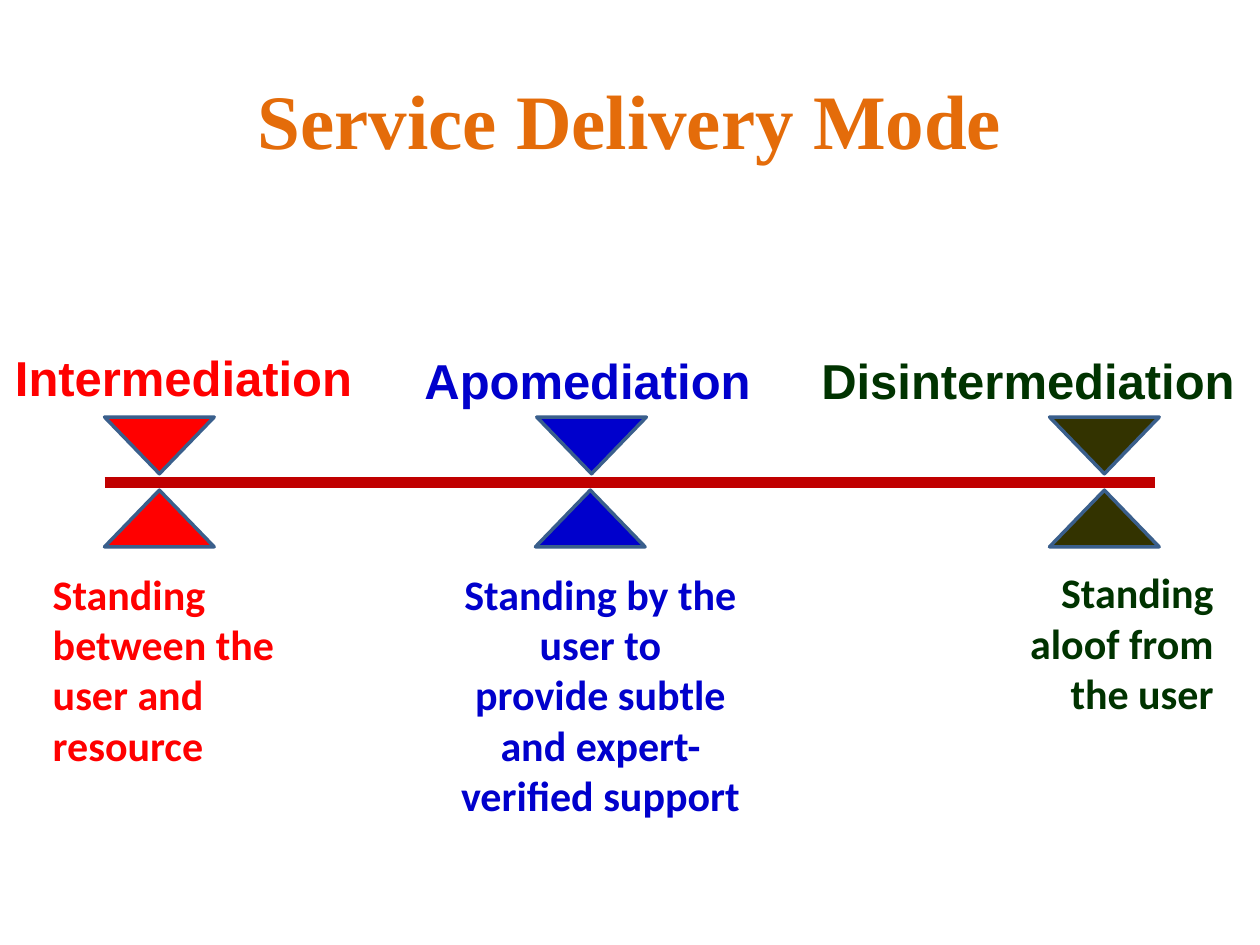
from dataclasses import dataclass

import pptx
import pptx.dml.color
import pptx.enum.shapes
import pptx.enum.text
import pptx.oxml
import pptx.presentation
import pptx.slide
import pptx.text.text
import pptx.util
from pptx.util import Inches

Align = pptx.enum.text.PP_ALIGN


@dataclass(frozen=True)
class Theme:
    title_color: str = "E46C0A"
    axis_color: str = "C00000"
    outline_color: str = "3A5F8C"
    red: str = "FF0000"
    blue: str = "0000CC"
    green: str = "003300"
    olive: str = "333300"
    title_font: str = "Times New Roman"
    label_font: str = "Arial"
    caption_font: str = "Calibri"
    title_size: int = 44
    label_size: int = 28
    caption_size: int = 24
    axis_width: int = 6
    outline_width: int = 2


@dataclass(frozen=True)
class Box:
    left: float
    top: float
    width: float
    height: float


@dataclass(frozen=True)
class Mode:
    name: str
    caption: tuple[str, ...]
    text_color: str
    marker_color: str
    label_box: Box
    caption_box: Box
    upper_left: float
    lower_left: float
    align: Align


THEME = Theme()
AXIS_LEFT, AXIS_RIGHT, AXIS_Y = 0.83, 9.17, 3.83
MARKER_WIDTH, MARKER_HEIGHT = 0.87, 0.45
UPPER_TOP, LOWER_TOP = 3.31, 3.89

MODES = (
    Mode("Intermediation", ("Standing between the", "user and resource"),
         THEME.red, THEME.red, Box(0.02, 2.71, 2.91, 0.57),
         Box(0.32, 4.46, 2.05, 1.72), 0.83, 0.83, Align.LEFT),
    Mode("Apomediation",
         ("Standing by the user to", "provide subtle", "and expert-verified support"),
         THEME.blue, THEME.blue, Box(3.27, 2.73, 2.82, 0.57),
         Box(3.47, 4.46, 2.59, 2.12), 4.26, 4.25, Align.CENTER),
    Mode("Disintermediation", ("Standing aloof from", "the user"),
         THEME.green, THEME.olive, Box(6.42, 2.73, 3.52, 0.57),
         Box(7.68, 4.45, 2.05, 1.31), 8.33, 8.33, Align.RIGHT),
)


def rgb(color: str) -> pptx.dml.color.RGBColor:
    return pptx.dml.color.RGBColor.from_string(color)


def write_lines(frame: pptx.text.text.TextFrame, lines: tuple[str, ...], font: str,
                size: int, color: str, align: Align, wrap: bool) -> None:
    frame.text = "\n".join(lines)
    frame.word_wrap = wrap
    for paragraph in frame.paragraphs:
        paragraph.alignment = align
        paragraph.font.name = font
        paragraph.font.size = pptx.util.Pt(size)
        paragraph.font.bold = True
        paragraph.font.color.rgb = rgb(color)


def add_title(slide: pptx.slide.Slide, text: str, box: Box) -> None:
    title = slide.shapes.title
    title.left, title.top = Inches(box.left), Inches(box.top)
    title.width, title.height = Inches(box.width), Inches(box.height)
    write_lines(title.text_frame, (text,), THEME.title_font, THEME.title_size,
                THEME.title_color, Align.CENTER, False)
    title.text_frame.auto_size = pptx.enum.text.MSO_AUTO_SIZE.NONE


def add_text(slide: pptx.slide.Slide, box: Box, lines: tuple[str, ...], font: str,
             size: int, color: str, align: Align, wrap: bool) -> None:
    shape = slide.shapes.add_textbox(Inches(box.left), Inches(box.top),
                                     Inches(box.width), Inches(box.height))
    write_lines(shape.text_frame, lines, font, size, color, align, wrap)


def add_axis(slide: pptx.slide.Slide) -> None:
    axis = slide.shapes.add_connector(
        pptx.enum.shapes.MSO_CONNECTOR.STRAIGHT,
        Inches(AXIS_LEFT), Inches(AXIS_Y), Inches(AXIS_RIGHT), Inches(AXIS_Y))
    axis.line.color.rgb = rgb(THEME.axis_color)
    axis.line.width = pptx.util.Pt(THEME.axis_width)
    properties = axis.element.spPr
    properties.append(properties.makeelement(pptx.oxml.ns.qn("a:effectLst"), {}))


def add_marker(slide: pptx.slide.Slide, left: float, top: float, color: str,
               rotation: int) -> None:
    marker = slide.shapes.add_shape(
        pptx.enum.shapes.MSO_SHAPE.ISOSCELES_TRIANGLE,
        Inches(left), Inches(top), Inches(MARKER_WIDTH), Inches(MARKER_HEIGHT))
    marker.rotation = rotation
    marker.shadow.inherit = False
    marker.fill.solid()
    marker.fill.fore_color.rgb = rgb(color)
    marker.line.color.rgb = rgb(THEME.outline_color)
    marker.line.width = pptx.util.Pt(THEME.outline_width)


def add_mode(slide: pptx.slide.Slide, mode: Mode) -> None:
    add_text(slide, mode.label_box, (mode.name,), THEME.label_font,
             THEME.label_size, mode.text_color, Align.LEFT, False)
    add_text(slide, mode.caption_box, mode.caption, THEME.caption_font,
             THEME.caption_size, mode.text_color, mode.align, True)
    add_marker(slide, mode.lower_left, LOWER_TOP, mode.marker_color, 0)
    add_marker(slide, mode.upper_left, UPPER_TOP, mode.marker_color, 180)


def main() -> None:
    presentation = pptx.Presentation()
    presentation.slide_width, presentation.slide_height = Inches(10), Inches(7.5)
    slide = presentation.slides.add_slide(
        presentation.slide_layouts.get_by_name("Title Only"))
    add_title(slide, "Service Delivery Mode", Box(1.92, 0.52, 6.16, 0.84))
    add_axis(slide)
    for mode in MODES:
        add_mode(slide, mode)
    presentation.save("out.pptx")


if __name__ == "__main__":
    main()
